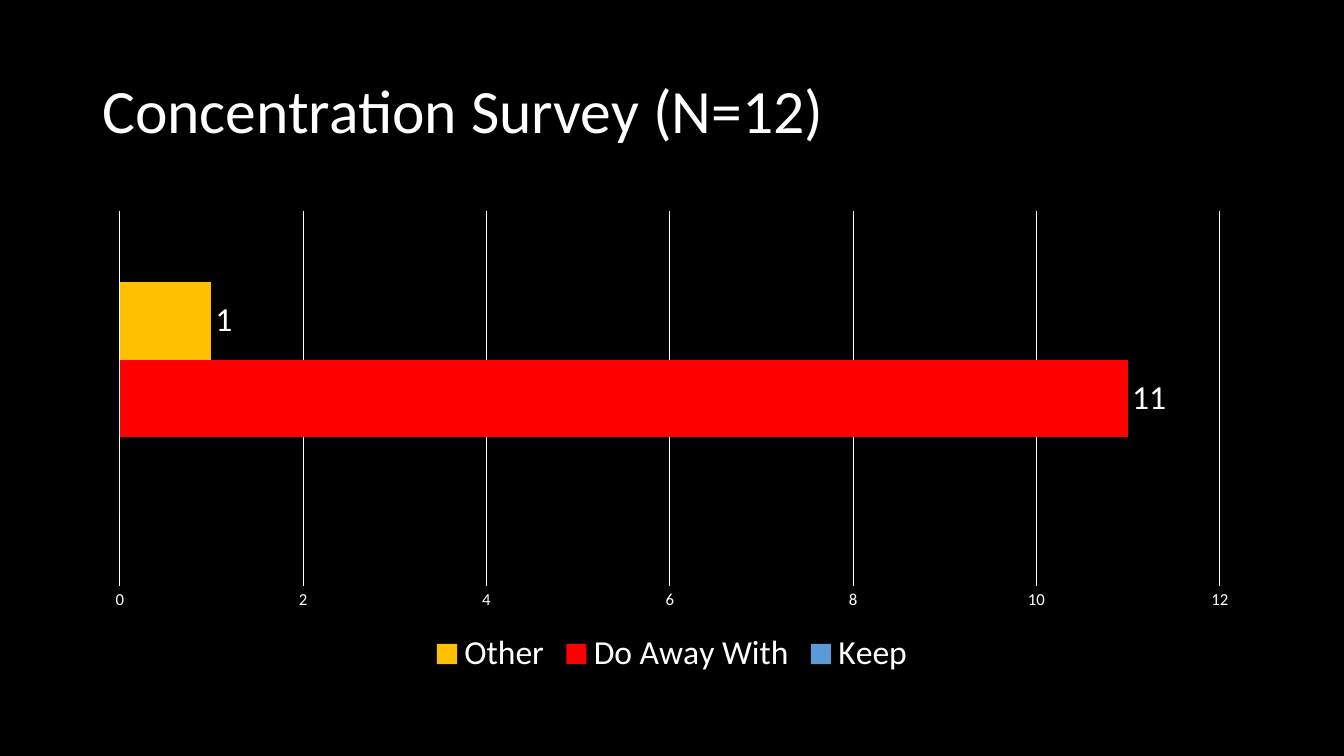
from pptx import Presentation
from pptx import util as u
from pptx.chart.data import CategoryChartData
from pptx.dml.color import RGBColor
from pptx.enum import chart as ch, text


def rgb(value):
    return RGBColor.from_string(value)


def style(font, size, color="FFFFFF"):
    font.name = "Calibri"
    font.size = u.Pt(size)
    font.bold = False
    font.color.rgb = rgb(color)


prs = Presentation()
prs.slide_width, prs.slide_height = u.Pt(960), u.Pt(540)
s = prs.slides.add_slide(prs.slide_layouts[6])
s.background.fill.solid()
s.background.fill.fore_color.rgb = rgb("000000")

tf = s.shapes.add_textbox(u.Pt(66), u.Pt(28.75), u.Pt(828), u.Pt(104.4)).text_frame
tf.word_wrap = True
tf.vertical_anchor = text.MSO_ANCHOR.MIDDLE
p = tf.paragraphs[0]
p.line_spacing = 0.9
r = p.add_run()
r.text = "Concentration Survey (N=12)"
style(r.font, 44)

answers = [("Keep", 0, "5B9BD5"), ("Do Away With", 11, "FF0000"), ("Other", 1, "FFC000")]
data = CategoryChartData()
data.categories = ["1"]
for name, votes, color in answers:
    data.add_series(name, [votes])
chart = s.shapes.add_chart(ch.XL_CHART_TYPE.BAR_CLUSTERED, u.Pt(66), u.Pt(144),
                           u.Pt(828), u.Pt(342.6), data).chart
style(chart.font, 10)
chart.has_title = False
chart.has_legend = True
chart.legend.position = ch.XL_LEGEND_POSITION.BOTTOM
chart.legend.include_in_layout = False
style(chart.legend.font, 24)

chart.category_axis.visible = False
axis = chart.value_axis
axis.major_tick_mark = axis.minor_tick_mark = ch.XL_TICK_MARK.NONE
axis.format.line.fill.background()
style(axis.tick_labels.font, 12)
grid = axis.major_gridlines.format.line
grid.color.rgb = rgb("FFFFFF")
grid.width = u.Pt(0.75)

plot = chart.plots[0]
plot.gap_width = 182
plot.overlap = 0
plot.vary_by_categories = False
for series, (name, votes, color) in zip(plot.series, answers):
    series.format.fill.solid()
    series.format.fill.fore_color.rgb = rgb(color)
    if votes:
        labels = series.data_labels
        labels.show_value = True
        labels.position = ch.XL_LABEL_POSITION.OUTSIDE_END
        style(labels.font, 24)

prs.save("out.pptx")
